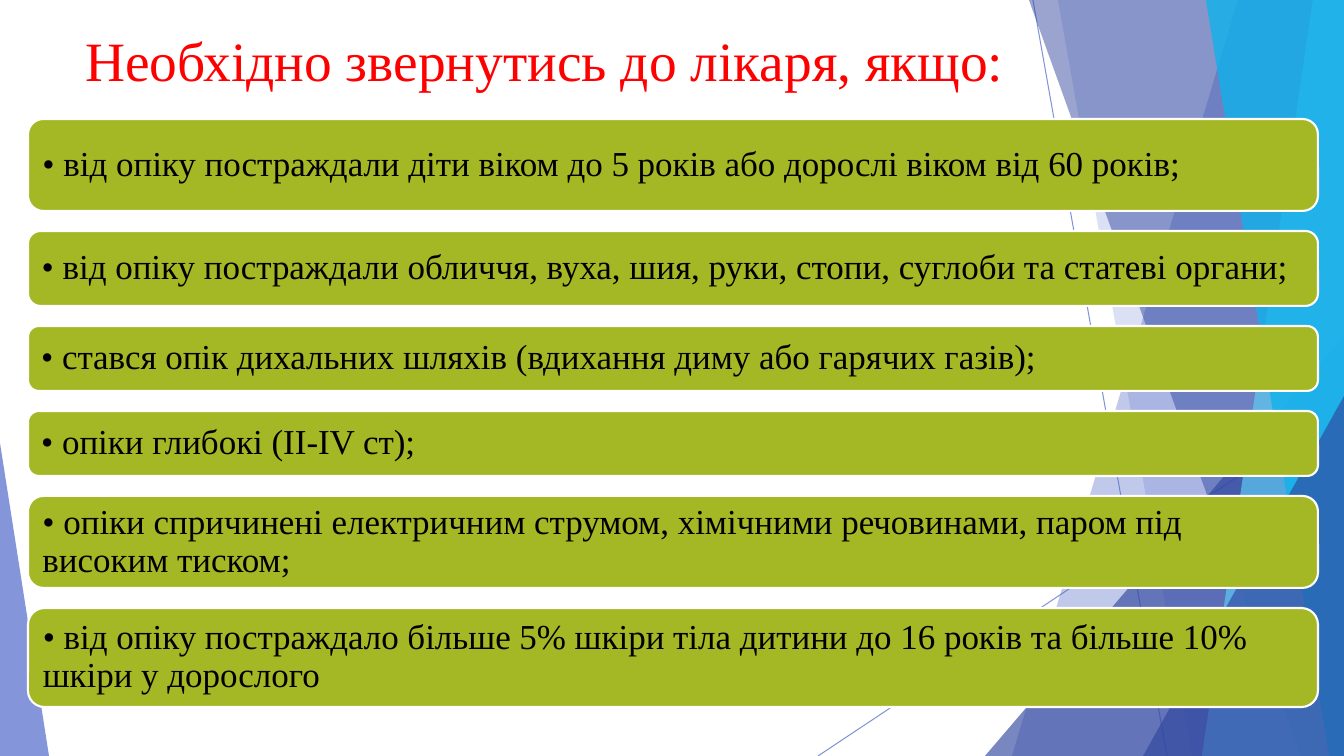
from lxml import etree
from pptx import Presentation, util as u
from pptx.dml.color import RGBColor
from pptx.enum import shapes, text
from pptx.oxml.ns import qn

PX = 914400 / 100.8
W, H = 1344, 756
FONT = "Times New Roman"
INDIGO = RGBColor(0x4E, 0x67, 0xC8)
NAVY = RGBColor(0x31, 0x47, 0x9F)
SKY = RGBColor(0x5E, 0xCC, 0xF3)
CYAN = RGBColor(0x11, 0xB2, 0xEB)
OLIVE = RGBColor(0xA4, 0xB7, 0x24)
RED = RGBColor(0xFF, 0, 0)
BLACK = RGBColor(0, 0, 0)
WHITE = RGBColor(0xFF, 0xFF, 0xFF)

TITLE = "Необхідно звернутись до лікаря, якщо:"
BARS = [
    (92, "• від опіку постраждали діти віком до 5 років або дорослі віком від 60 років;"),
    (75, "• від опіку постраждали обличчя, вуха, шия, руки, стопи, суглоби та статеві органи;"),
    (65, "• стався опік дихальних шляхів (вдихання диму або гарячих газів);"),
    (65, "• опіки глибокі (ІІ-ІV ст);"),
    (92, "• опіки спричинені електричним струмом, хімічними речовинами, паром під високим тиском;"),
    (99, "• від опіку постраждало більше 5% шкіри тіла дитини до 16 років та більше 10% шкіри у дорослого"),
]
BAR_LEFT, BAR_TOP, BAR_WIDTH, BAR_GAP = 28, 119, 1290, 20

LINES = [(1033, 0, 1167, H), (W, 406, 818, H)]
FACETS = [
    ("band", (1238, 1012), INDIGO, 35),
    ("band", (1058, 1192), INDIGO, 20),
    ("triangle", (985, 336, 359, 1), NAVY, 65),
    ("band", (1029, 1301), NAVY, 49),
    ("band", (1313, 1202), SKY, 69),
    ("band", (1206, 1329), CYAN, 80),
    ("triangle", (1143, 396, 201, 1), NAVY, 65),
    ("triangle", (0, 443, 49, 0), INDIGO, 69),
]


def px(*values):
    return [u.Emu(round(v * PX)) for v in values]


def set_alpha(fill, percent):
    for clr in fill.iter(qn("a:srgbClr")):
        etree.SubElement(clr, qn("a:alpha"), val=str(percent * 1000))


def write(sp, content, size, color, align, inset_y):
    tf = sp.text_frame
    tf.word_wrap = True
    tf.vertical_anchor = text.MSO_ANCHOR.MIDDLE
    tf.margin_left, tf.margin_right = px(10, 10)
    tf.margin_top, tf.margin_bottom = px(inset_y, inset_y)
    p = tf.paragraphs[0]
    p.alignment = align
    p.line_spacing = 0.9
    r = p.add_run()
    r.text = content
    r.font.name, r.font.size = FONT, u.Pt(size)
    r.font.color.rgb = color


def add_line(s, ends):
    line = s.shapes.add_connector(shapes.MSO_CONNECTOR.STRAIGHT, *px(*ends))
    line.line.color.rgb = INDIGO
    line.line.width = u.Pt(0.75)
    sp_pr = line._element.spPr
    set_alpha(sp_pr, 69)
    etree.SubElement(sp_pr, qn("a:effectLst"))


def add_facet(s, kind, geometry, color, alpha):
    if kind == "band":
        top_x, bottom_x = geometry
        fb = s.shapes.build_freeform(top_x, 0, scale=PX)
        fb.add_line_segments([(W, 0), (W, H), (bottom_x, H)], close=True)
        sp = fb.convert_to_shape()
    else:
        x, y, width, apex = geometry
        sp = s.shapes.add_shape(shapes.MSO_SHAPE.ISOSCELES_TRIANGLE, *px(x, y, width, H - y))
        sp.adjustments[0] = apex
    sp.shadow.inherit = False
    sp.line.fill.background()
    sp.fill.solid()
    sp.fill.fore_color.rgb = color
    set_alpha(sp._element.spPr, alpha)


def main():
    prs = Presentation()
    prs.slide_width, prs.slide_height = px(W, H)
    s = prs.slides.add_slide(prs.slide_layouts[6])

    for ends in LINES:
        add_line(s, ends)
    for facet in FACETS:
        add_facet(s, *facet)

    title = s.shapes.add_textbox(*px(0, 28, 1089, 71))
    write(title, TITLE, 39.6, RED, text.PP_ALIGN.CENTER, 5)

    top = BAR_TOP
    for height, content in BARS:
        bar = s.shapes.add_shape(shapes.MSO_SHAPE.ROUNDED_RECTANGLE,
                                 *px(BAR_LEFT, top, BAR_WIDTH, height))
        bar.shadow.inherit = False
        bar.fill.solid()
        bar.fill.fore_color.rgb = OLIVE
        bar.line.color.rgb = WHITE
        bar.line.width = u.Pt(1.5)
        write(bar, content, 25, BLACK, text.PP_ALIGN.LEFT, 10)
        top += height + BAR_GAP

    prs.save("out.pptx")


if __name__ == "__main__":
    main()
